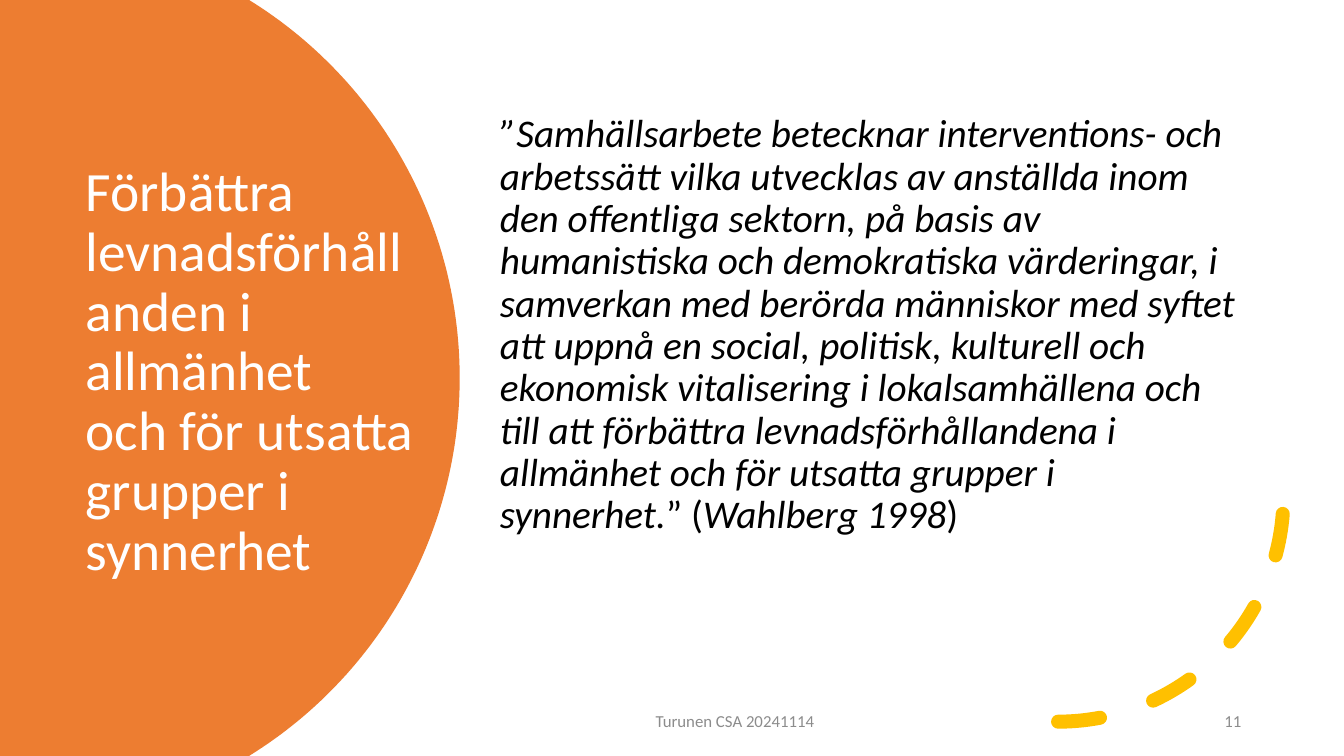
import math
from pptx import Presentation
from pptx.dml.color import RGBColor
from pptx.enum import dml, shapes, text
from pptx.util import Inches, Pt

COLORS = {"orange": "ED7D31", "yellow": "FFC000", "white": "FFFFFF", "black": "000000", "gray": "8C8C8C"}


def write_text(shape, pieces, size, color, align=text.PP_ALIGN.LEFT, anchor=text.MSO_ANCHOR.MIDDLE, line_spacing=1.0):
    frame = shape.text_frame
    frame.word_wrap = True
    frame.auto_size = text.MSO_AUTO_SIZE.NONE
    frame.vertical_anchor = anchor
    paragraph = frame.paragraphs[0]
    paragraph.alignment = align
    paragraph.line_spacing = line_spacing
    for index, (content, italic) in enumerate(pieces):
        if content == "\n":
            paragraph.add_line_break()
            continue
        run = paragraph.add_run()
        run.text = content
        run.font.name = "Calibri"
        run.font.size = Pt(size)
        run.font.italic = italic
        run.font.color.rgb = RGBColor.from_string(COLORS[color])


presentation = Presentation()
presentation.slide_width = Inches(13.33)
presentation.slide_height = Inches(7.5)
slide = presentation.slides.add_slide(presentation.slide_layouts[5])

center_x, center_y, radius = 0.15, 3.75, 4.41
half_angle = math.asin(center_y / radius)
steps = 120
angles = [half_angle * (2 * step / steps - 1) for step in range(steps + 1)]
edge = [(Inches(center_x + radius * math.cos(angle)), Inches(center_y + radius * math.sin(angle))) for angle in angles]
builder = slide.shapes.build_freeform(0, 0)
builder.add_line_segments(edge + [(0, Inches(7.5))], close=True)
panel = builder.convert_to_shape()
panel.shadow.inherit = False
panel.fill.solid()
panel.fill.fore_color.rgb = RGBColor.from_string(COLORS["orange"])
panel.line.fill.background()

title = slide.shapes.title
title.left, title.top, title.width, title.height = Inches(0.75), Inches(1.26), Inches(3.5), Inches(4.88)
slide.shapes._spTree.append(title._element)
write_text(
    title,
    [("Förbättra levnadsförhållanden i allmänhet ", False), ("\n", False), ("och för utsatta grupper i synnerhet", False)],
    39.6, "white", line_spacing=0.9,
)

arc = slide.shapes.add_shape(shapes.MSO_SHAPE.ARC, Inches(8.26), Inches(2.69), Inches(4.47), Inches(4.47))
arc.shadow.inherit = False
arc.fill.background()
arc.line.color.rgb = RGBColor.from_string(COLORS["yellow"])
arc.line.width = Pt(10)
arc.line.dash_style = dml.MSO_LINE.DASH
arc._element.spPr.find("{*}ln").set("cap", "rnd")
arc._element.spPr.find("{*}xfrm").set("flipV", "1")

quote = slide.shapes.add_textbox(Inches(4.86), Inches(1.08), Inches(7.55), Inches(5.68))
write_text(
    quote,
    [
        ("”Samhällsarbete betecknar interventions- och arbetssätt vilka utvecklas av anställda inom den offentliga "
         "sektorn, på basis av humanistiska och demokratiska värderingar, i samverkan med berörda människor med "
         "syftet att uppnå en social, politisk, kulturell och ekonomisk vitalisering i lokalsamhällena och till att "
         "förbättra levnadsförhållandena i allmänhet och för utsatta grupper i synnerhet.", True),
        ("” (", False),
        ("Wahlberg 1998", True),
        (")", False),
    ],
    28, "black", anchor=text.MSO_ANCHOR.TOP, line_spacing=0.9,
)

for left, width, content, align in [
    (4.42, 5.74, "Turunen CSA 20241114", text.PP_ALIGN.CENTER),
    (10.43, 1.98, "11", text.PP_ALIGN.RIGHT),
]:
    footer = slide.shapes.add_textbox(Inches(left), Inches(6.95), Inches(width), Inches(0.4))
    write_text(footer, [(content, False)], 12, "gray", align=align)

presentation.save("out.pptx")
